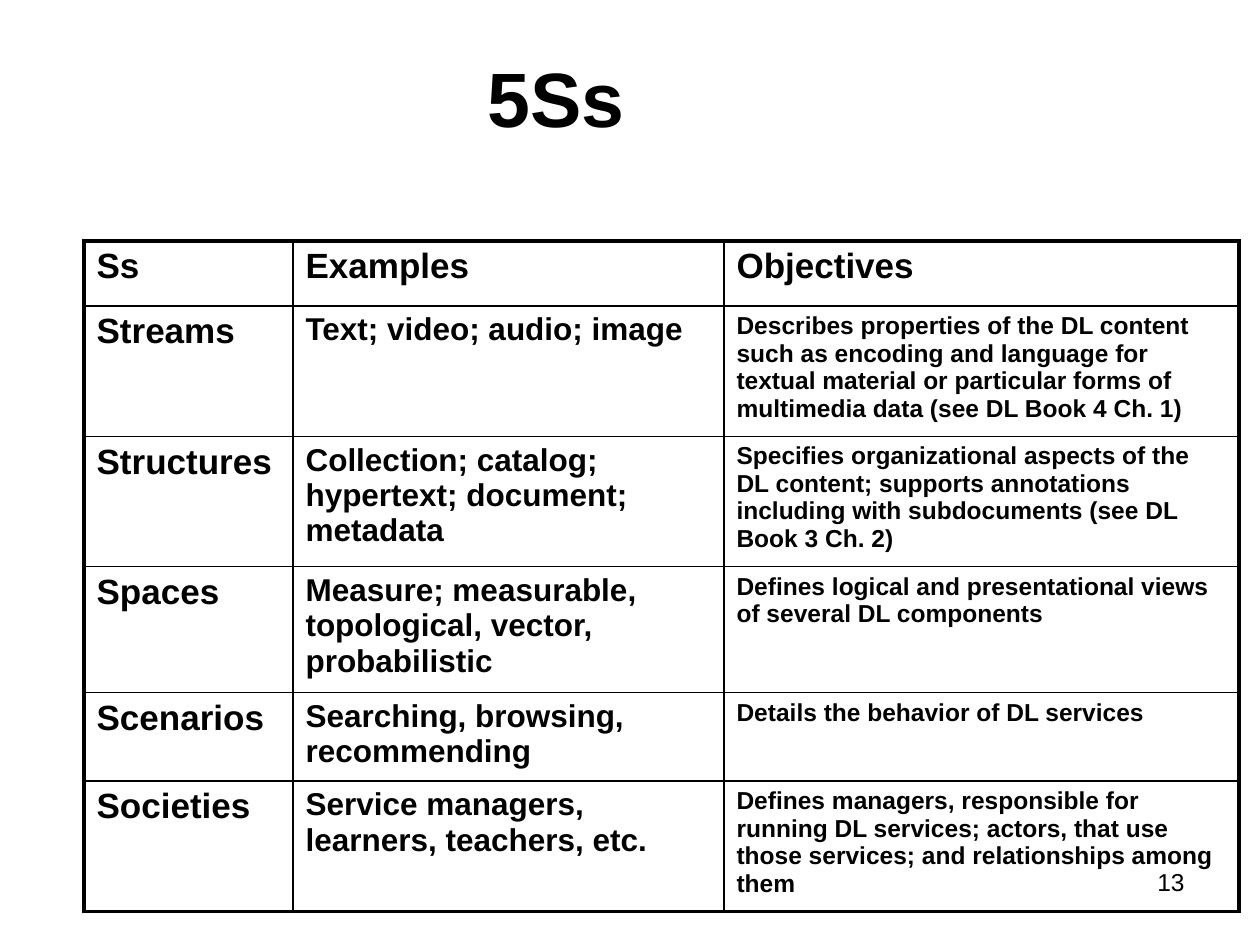
from lxml import etree
from pptx import Presentation
from pptx.dml.color import RGBColor
from pptx.enum.text import MSO_ANCHOR, PP_ALIGN
from pptx.oxml.ns import qn
from pptx.util import Pt

BLACK = RGBColor(0, 0, 0)
LEFT, RIGHT, CENTER = PP_ALIGN.LEFT, PP_ALIGN.RIGHT, PP_ALIGN.CENTER
TOP, MIDDLE = MSO_ANCHOR.TOP, MSO_ANCHOR.MIDDLE
SCALE = 914400 / 126
THIN, THICK = Pt(1), Pt(2.25)

COLS = [209, 431, 515]
ROWS = [65, 128, 128, 119, 87, 129]
HEAD = [20, 20, 20]
BODY = [20, 18, 14]
CELLS = [
    ("Ss", "Examples", "Objectives"),
    ("Streams", "Text; video; audio; image",
     "Describes properties of the DL content such as encoding and language "
     "for textual material or particular forms of multimedia data "
     "(see DL Book 4 Ch. 1)"),
    ("Structures", "Collection; catalog; hypertext; document; metadata",
     "Specifies organizational aspects of the DL content; supports "
     "annotations including with subdocuments (see DL Book 3 Ch. 2)"),
    ("Spaces", "Measure; measurable, topological, vector, probabilistic",
     "Defines logical and presentational views of several DL components"),
    ("Scenarios", "Searching, browsing, recommending",
     "Details the behavior of DL services"),
    ("Societies", "Service managers, learners, teachers, etc.",
     "Defines managers, responsible for running DL services; actors, that "
     "use those services; and relationships among them"),
]


def px(*nums):
    """Turn px into EMU."""
    return [round(n * SCALE) for n in nums]


class Deck:
    def __init__(self, wide, high):
        self.prs = Presentation()
        self.prs.slide_width, self.prs.slide_height = px(wide, high)
        self.slide = self.prs.slides.add_slide(self.prs.slide_layouts[6])
        self.font = {"name": "Arial", "bold": True}

    def label(self, frame, text, size, align=LEFT, **extra):
        """Put styled text in a frame."""
        para = frame.paragraphs[0]
        para.alignment = align
        run = para.add_run()
        run.text = text
        style = {**self.font, "size": Pt(size), **extra}
        for key, value in style.items():
            setattr(run.font, key, value)
        run.font.color.rgb = BLACK

    def text(self, box, text, size, align, anchor=TOP, **extra):
        frame = self.slide.shapes.add_textbox(*px(*box)).text_frame
        frame.word_wrap = True
        frame.vertical_anchor = anchor
        self.label(frame, text, size, align, **extra)

    def edge(self, cell, side, width):
        """Draw one border of a cell."""
        props = cell._tc.get_or_add_tcPr()
        line = etree.SubElement(props, qn("a:ln" + side), w=str(width))
        fill = etree.SubElement(line, qn("a:solidFill"))
        etree.SubElement(fill, qn("a:srgbClr"), val=str(BLACK))

    def table(self, left, top, cols, rows, cells):
        box = px(left, top, sum(cols), sum(rows))
        grid = self.slide.shapes.add_table(len(rows), len(cols), *box).table
        grid.first_row = grid.horz_banding = False
        for col, wide in zip(grid.columns, px(*cols)):
            col.width = wide
        for row, high in zip(grid.rows, px(*rows)):
            row.height = high
        for r, line in enumerate(cells):
            for c, text in enumerate(line):
                cell = grid.cell(r, c)
                outer = {"L": c == 0, "R": c == len(cols) - 1,
                         "T": r == 0, "B": r == len(rows) - 1}
                for side, thick in outer.items():
                    self.edge(cell, side, THICK if thick else THIN)
                cell.fill.background()
                sizes = BODY if r else HEAD
                self.label(cell.text_frame, text, sizes[c])


def main():
    deck = Deck(1260, 945)
    deck.text((903, 861, 294, 65), "13", 14, RIGHT, bold=False)
    deck.text((374, 38, 365, 117), "5Ss", 44, CENTER, MIDDLE)
    deck.table(84, 241, COLS, ROWS, CELLS)
    deck.prs.save("out.pptx")


if __name__ == "__main__":
    main()
